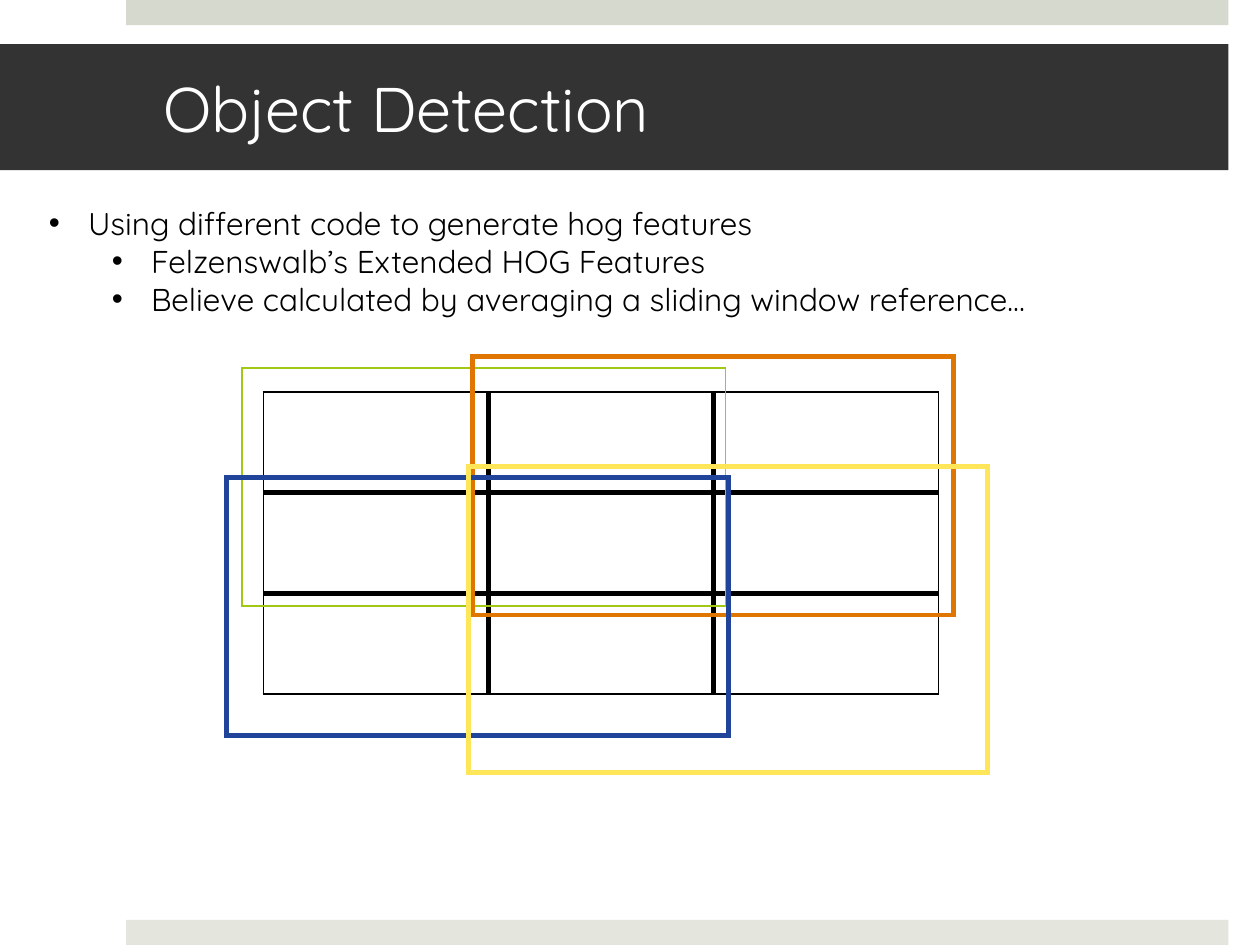
"""Build the Object Detection slide with overlapping sliding windows on a cell grid."""
from dataclasses import dataclass

from lxml.etree import SubElement
from pptx import Presentation
from pptx.dml.color import RGBColor
from pptx.enum.shapes import MSO_SHAPE
from pptx.enum.text import MSO_ANCHOR, PP_ALIGN
from pptx.oxml.ns import qn
from pptx.slide import Slide
from pptx.text.text import TextFrame
from pptx.util import Inches, Length, Pt

FONT = "Quicksand"
BLACK = RGBColor(0x00, 0x00, 0x00)
WHITE = RGBColor(0xFF, 0xFF, 0xFF)
CHARCOAL = RGBColor(0x33, 0x33, 0x33)
SAGE = RGBColor(0xD6, 0xD9, 0xCD)
PALE_SAGE = RGBColor(0xE4, 0xE6, 0xDE)
GREEN = RGBColor(0xA2, 0xC8, 0x16)
ORANGE = RGBColor(0xE0, 0x76, 0x02)
BLUE = RGBColor(0x21, 0x44, 0x9B)
YELLOW = RGBColor(0xFE, 0xE6, 0x58)
THIN, THICK = 1, 3


@dataclass(frozen=True)
class Box:
    left: float
    top: float
    width: float
    height: float

    def lengths(self) -> tuple[Length, ...]:
        return tuple(Inches(v) for v in (self.left, self.top, self.width, self.height))


@dataclass(frozen=True)
class Grid:
    box: Box
    color: RGBColor
    outer: int
    inner: int = THICK
    count: int = 1


BANDS = (
    (Box(1, 0, 8.75, 0.2), SAGE),
    (Box(1, 7.3, 8.75, 0.2), PALE_SAGE),
)
POINTS = (
    ("Using different code to generate hog features", 0),
    ("Felzenswalb’s Extended HOG Features", 1),
    ("Believe calculated by averaging a sliding window reference…", 1),
)
GRIDS = (
    Grid(Box(2.09, 3.11, 5.36, 2.4), BLACK, THIN, count=3),
    Grid(Box(1.92, 2.92, 3.84, 1.89), GREEN, THIN),
    Grid(Box(3.75, 2.83, 3.82, 2.05), ORANGE, THICK),
    Grid(Box(1.8, 3.79, 3.98, 2.05), BLUE, THICK),
    Grid(Box(3.72, 3.7, 4.12, 2.43), YELLOW, THICK),
)


def add_band(slide: Slide, box: Box, color: RGBColor):
    band = slide.shapes.add_shape(MSO_SHAPE.RECTANGLE, *box.lengths())
    band.shadow.inherit = False
    band.fill.solid()
    band.fill.fore_color.rgb = color
    band.line.fill.background()
    return band


def write(frame: TextFrame, text: str, *, size: int, color: RGBColor,
          level: int = 0, bullet: bool = False) -> None:
    last = frame.paragraphs[-1]
    paragraph = frame.add_paragraph() if last.runs else last
    paragraph.alignment = PP_ALIGN.LEFT
    paragraph.level = level
    run = paragraph.add_run()
    run.text = text
    run.font.name = FONT
    run.font.size = Pt(size)
    run.font.color.rgb = color
    if bullet:
        properties = paragraph._p.get_or_add_pPr()
        properties.set("marL", str(Inches(0.31 + 0.5 * level)))
        properties.set("indent", str(Inches(-0.31)))
        SubElement(properties, qn("a:buFont"), typeface="Arial")
        SubElement(properties, qn("a:buChar"), char="•")


def add_border(cell, side: str, color: RGBColor, width: int) -> None:
    line = SubElement(cell._tc.get_or_add_tcPr(), qn(f"a:ln{side}"), w=str(Pt(width)))
    fill = SubElement(line, qn("a:solidFill"))
    SubElement(fill, qn("a:srgbClr"), val=str(color))


def add_grid(slide: Slide, grid: Grid) -> None:
    table = slide.shapes.add_table(grid.count, grid.count, *grid.box.lengths()).table
    table.first_row = table.horz_banding = False
    last = grid.count - 1
    for row in range(grid.count):
        for column in range(grid.count):
            cell = table.cell(row, column)
            on_edge = {"L": column == 0, "R": column == last,
                       "T": row == 0, "B": row == last}
            for side, is_outer in on_edge.items():
                add_border(cell, side, grid.color, grid.outer if is_outer else grid.inner)
            cell.fill.background()


def main() -> None:
    deck = Presentation()
    deck.slide_width, deck.slide_height = Inches(10), Inches(7.5)
    slide = deck.slides.add_slide(deck.slide_layouts[6])

    for box, color in BANDS:
        add_band(slide, box, color)

    title = add_band(slide, Box(0, 0.35, 9.75, 1), CHARCOAL).text_frame
    title.word_wrap = True
    title.vertical_anchor = MSO_ANCHOR.MIDDLE
    title.margin_left, title.margin_right = Inches(1.3), Inches(0.3)
    write(title, "Object Detection", size=36, color=WHITE)

    points = slide.shapes.add_textbox(*Box(0.29, 1.57, 9.38, 1.31).lengths()).text_frame
    points.word_wrap = True
    for text, level in POINTS:
        write(points, text, size=18, color=BLACK, level=level, bullet=True)

    for grid in GRIDS:
        add_grid(slide, grid)

    deck.save("out.pptx")


if __name__ == "__main__":
    main()
